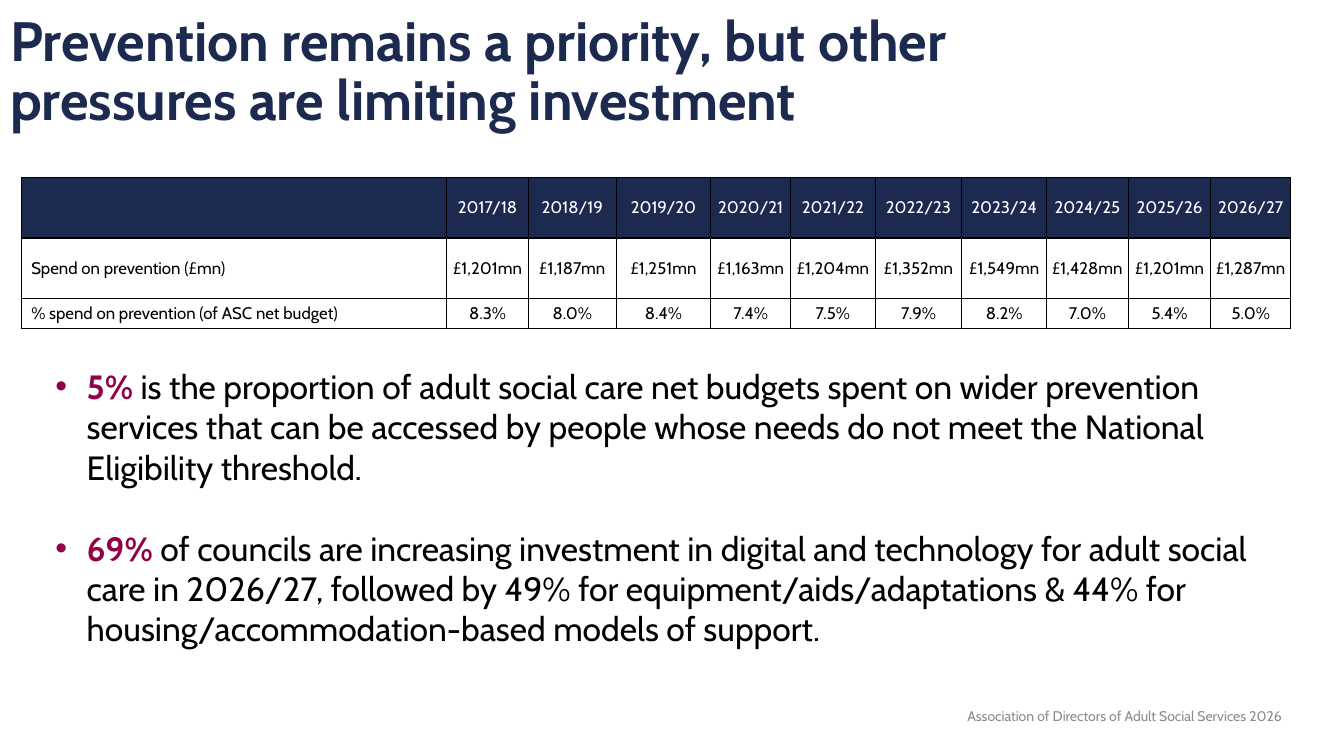
from lxml import etree
from pptx import Presentation
from pptx import util as u
from pptx.dml.color import RGBColor
from pptx.enum import text
from pptx.oxml import ns

COLOURS = {"navy": "1D2A50", "plum": "920146", "grey": "8C8C8C",
           "black": "000000", "white": "FFFFFF"}

# Column widths as percentages of the slide's width
LABEL_WIDTH = 31.66
YEAR_WIDTHS = [6.08, 6.53, 7.05, 5.93, 6.3, 6.45, 6.3, 6.08, 6.15, 5.93]
ROW_HEIGHTS = [8, 8, 4]

SPEND_ROWS = [
    [""] + [f"{year}/{year - 1999}" for year in range(2017, 2027)],
    ["Spend on prevention (£mn)", "£1,201mn", "£1,187mn", "£1,251mn", "£1,163mn",
     "£1,204mn", "£1,352mn", "£1,549mn", "£1,428mn", "£1,201mn", "£1,287mn"],
    ["% spend on prevention (of ASC net budget)", "8.3%", "8.0%", "8.4%", "7.4%",
     "7.5%", "7.9%", "8.2%", "7.0%", "5.4%", "5.0%"],
]

FINDINGS = [
    ("5% ", "is the proportion of adult social care net budgets spent on wider "
     "prevention services that can be accessed by people whose needs do not meet "
     "the National Eligibility threshold."),
    ("69% ", "of councils are increasing investment in digital and technology for "
     "adult social care in 2026/27, followed by 49% for equipment/aids/adaptations "
     "& 44% for housing/accommodation-based models of support."),
]


def add_xml(parent, tag, **attributes):
    return etree.SubElement(parent, ns.qn(tag), attributes)


def set_all(target, values):
    for name, value in values.items():
        setattr(target, name, value)


class SlideBuilder:
    """Holds the style and the slide; lengths are percentages of the slide."""

    font_name = "Cabin"

    def __init__(self, deck):
        self.deck = deck
        self.page = deck.slides.add_slide(deck.slide_layouts[1])

    def across(self, share):
        return round(self.deck.slide_width * share / 100)

    def down(self, share):
        return round(self.deck.slide_height * share / 100)

    def area(self, left, top, width, height):
        return self.across(left), self.down(top), self.across(width), self.down(height)

    def place(self, box, *shares):
        set_all(box, dict(zip(("left", "top", "width", "height"), self.area(*shares))))

    def frame(self, box, anchor):
        set_all(box.text_frame, {"word_wrap": True, "vertical_anchor": anchor,
                                 "auto_size": text.MSO_AUTO_SIZE.NONE})
        return box.text_frame

    def add_words(self, para, words, size, colour, bold=False):
        span = para.add_run()
        span.text = words
        set_all(span.font, {"name": self.font_name, "size": u.Pt(size), "bold": bold})
        span.font.color.rgb = RGBColor.from_string(COLOURS[colour])

    def title(self, words, *shares):
        box = self.page.shapes.title
        self.place(box, *shares)
        para = self.frame(box, text.MSO_ANCHOR.MIDDLE).paragraphs[0]
        set_all(para, {"alignment": text.PP_ALIGN.LEFT, "line_spacing": 0.9})
        self.add_words(para, words, 39.6, "navy", True)

    def bullets(self, findings, *shares):
        box = self.page.placeholders[1]
        self.place(box, *shares)
        frame = self.frame(box, text.MSO_ANCHOR.TOP)
        for index, (figure, words) in enumerate(findings):
            para = frame.add_paragraph() if index else frame.paragraphs[0]
            properties = para._p.get_or_add_pPr()
            indent = u.Inches(0.31)
            properties.set("marL", str(indent))
            properties.set("indent", str(-indent))
            bullet_colour = add_xml(properties, "a:buClr")
            add_xml(bullet_colour, "a:srgbClr", val=COLOURS["plum"])
            add_xml(properties, "a:buFont", typeface="Arial")
            add_xml(properties, "a:buChar", char="•")
            para.space_before = u.Pt(29 if index else 0)
            self.add_words(para, figure, 24, "plum", True)
            self.add_words(para, words, 24, "black")

    def footer(self, words, *shares):
        box = self.page.shapes.add_textbox(*self.area(*shares))
        para = self.frame(box, text.MSO_ANCHOR.MIDDLE).paragraphs[0]
        para.alignment = text.PP_ALIGN.RIGHT
        self.add_words(para, words, 10, "grey")

    def cell(self, cell, words, is_header, is_label):
        set_all(cell, {"margin_left": u.Inches(0.1) if is_label else 0,
                       "margin_right": 0, "margin_top": 0, "margin_bottom": 0,
                       "vertical_anchor": text.MSO_ANCHOR.MIDDLE})
        # Borders come before the fill in the cell's properties
        properties = cell._tc.get_or_add_tcPr()
        for side in "LRTB":
            line = add_xml(properties, f"a:ln{side}", w=str(u.Pt(1)))
            add_xml(add_xml(line, "a:solidFill"), "a:srgbClr", val=COLOURS["black"])
        cell.fill.solid()
        fill = "navy" if is_header else "white"
        cell.fill.fore_color.rgb = RGBColor.from_string(COLOURS[fill])
        para = cell.text_frame.paragraphs[0]
        para.alignment = text.PP_ALIGN.LEFT if is_label else text.PP_ALIGN.CENTER
        if words:
            self.add_words(para, words, 12, "white" if is_header else "black")

    def table(self, rows, widths, heights, left, top):
        area = self.area(left, top, sum(widths), sum(heights))
        table = self.page.shapes.add_table(len(rows), len(widths), *area).table
        set_all(table, {"first_row": False, "horz_banding": False})
        for column, width in zip(table.columns, widths):
            column.width = self.across(width)
        for row, height in zip(table.rows, heights):
            row.height = self.down(height)
        for r, values in enumerate(rows):
            for c, words in enumerate(values):
                self.cell(table.cell(r, c), words, r == 0, c == 0)


def main():
    deck = Presentation()
    set_all(deck, {"slide_width": u.Inches(13.33), "slide_height": u.Inches(7.5)})
    slide = SlideBuilder(deck)

    # Heading and footer
    slide.title("Prevention remains a priority, but other pressures are limiting "
                "investment", 0, 0, 86.27, 19.33)
    slide.footer("Association of Directors of Adult Social Services 2026",
                 62.34, 92, 33.76, 5.33)

    # Prevention spend by year
    slide.table(SPEND_ROWS, [LABEL_WIDTH] + YEAR_WIDTHS, ROW_HEIGHTS, 1.58, 23.47)

    # Key findings
    slide.bullets(FINDINGS, 3.38, 47.73, 94.52, 39.07)

    deck.save("out.pptx")


if __name__ == "__main__":
    main()
